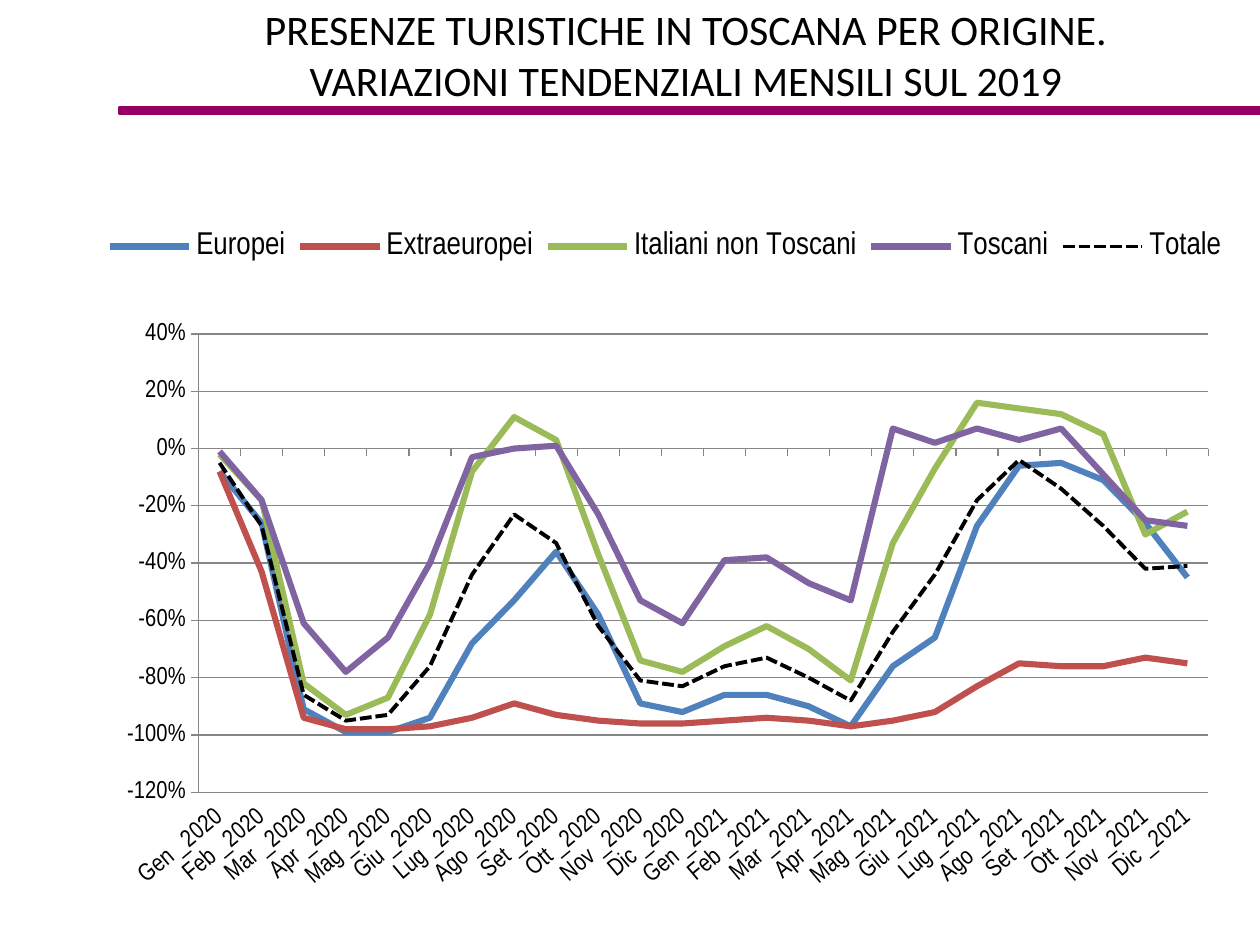
from dataclasses import dataclass

from pptx import Presentation
from pptx.chart.data import CategoryChartData
from pptx.dml.color import RGBColor
from pptx.enum.chart import (XL_CHART_TYPE, XL_LEGEND_POSITION, XL_TICK_MARK,
                             XL_TICK_LABEL_POSITION)
from pptx.enum.dml import MSO_LINE
from pptx.enum.shapes import MSO_SHAPE
from pptx.enum.text import MSO_ANCHOR, PP_ALIGN
from pptx.oxml import parse_xml
from pptx.oxml.ns import nsdecls, qn
from pptx.util import Cm, Pt


@dataclass(frozen=True)
class Theme:
    black: str = "000000"
    rule: str = "960064"
    grid: str = "868686"
    lines: tuple = ("4F81BD", "C0504D", "9BBB59", "8064A2", "000000")
    head: str = "Calibri"
    label: str = "Arial Narrow"
    title: int = 24
    legend: int = 18
    axis: int = 14


THEME = Theme()
TITLE = "PRESENZE TURISTICHE IN TOSCANA PER ORIGINE.\vVARIAZIONI TENDENZIALI MENSILI SUL 2019"
MONTHS = "Gen Feb Mar Apr Mag Giu Lug Ago Set Ott Nov Dic".split()
YEARS = (2020, 2021)
# Percent change on the same month of 2019
SERIES = {
    "Europei": (-8, -26, -91, -99, -99, -94, -68, -53, -36, -58, -89, -92,
                -86, -86, -90, -97, -76, -66, -27, -6, -5, -11, -26, -45),
    "Extraeuropei": (-8, -43, -94, -98, -98, -97, -94, -89, -93, -95, -96, -96,
                     -95, -94, -95, -97, -95, -92, -83, -75, -76, -76, -73, -75),
    "Italiani non Toscani": (-2, -18, -82, -93, -87, -58, -8, 11, 3, -37, -74, -78,
                             -69, -62, -70, -81, -33, -7, 16, 14, 12, 5, -30, -22),
    "Toscani": (-1, -18, -61, -78, -66, -40, -3, 0, 1, -23, -53, -61,
                -39, -38, -47, -53, 7, 2, 7, 3, 7, -9, -25, -27),
    "Totale": (-5, -27, -86, -95, -93, -76, -44, -23, -33, -62, -81, -83,
               -76, -73, -80, -88, -64, -44, -18, -4, -14, -27, -42, -41),
}


def color(code):
    return RGBColor.from_string(code)


def style(font, name, size):
    font.name = name
    font.size = Pt(size)
    font.bold = False
    font.color.rgb = color(THEME.black)


def stroke(line, code, width):
    line.color.rgb = color(code)
    line.width = Pt(width)


def add_rule(slide):
    bar = slide.shapes.add_shape(MSO_SHAPE.RECTANGLE, Cm(2.41), Cm(2.18), Cm(22.99), Cm(0.1))
    bar.shadow.inherit = False
    bar.fill.solid()
    bar.fill.fore_color.rgb = color(THEME.rule)
    stroke(bar.line, THEME.rule, 2)


def add_title(slide):
    frame = slide.shapes.add_textbox(Cm(2.36), Cm(0.05), Cm(22.94), Cm(2.08)).text_frame
    frame.word_wrap = True
    frame.vertical_anchor = MSO_ANCHOR.MIDDLE
    frame.text = TITLE
    para = frame.paragraphs[0]
    para.alignment = PP_ALIGN.CENTER
    style(para.font, THEME.head, THEME.title)


def place(part, index, box, inner=False):
    """Fix a chart part at box: left, top, width, height as shares of the chart."""
    for old in part.findall(qn("c:layout")):
        part.remove(old)
    target = '<c:layoutTarget val="inner"/>' if inner else ""
    modes = "".join(f'<c:{key}Mode val="edge"/>' for key in "xy")
    sizes = "".join(f'<c:{key} val="{val}"/>' for key, val in zip("xywh", box))
    part.insert(index, parse_xml(
        f'<c:layout {nsdecls("c")}><c:manualLayout>{target}{modes}{sizes}'
        '</c:manualLayout></c:layout>'))


def style_axes(chart):
    months, scale = chart.category_axis, chart.value_axis
    for axis in (months, scale):
        style(axis.tick_labels.font, THEME.label, THEME.axis)
        stroke(axis.format.line, THEME.grid, 0.75)
        axis.major_tick_mark = XL_TICK_MARK.OUTSIDE
        axis.minor_tick_mark = XL_TICK_MARK.NONE
    months.tick_label_position = XL_TICK_LABEL_POSITION.LOW
    months.tick_labels.font._element.getparent().getparent().getparent().find(
        qn("a:bodyPr")).set("rot", str(-40 * 60000))
    scale.minimum_scale, scale.maximum_scale, scale.major_unit = -1.2, 0.4, 0.2
    scale.tick_labels.number_format = "0%"
    scale.tick_labels.number_format_is_linked = False
    scale.has_major_gridlines = True
    stroke(scale.major_gridlines.format.line, THEME.grid, 0.75)


def style_legend(chart):
    chart.has_legend = True
    legend = chart.legend
    legend.position = XL_LEGEND_POSITION.TOP
    legend.include_in_layout = False
    style(legend.font, THEME.label, THEME.legend)
    place(legend._element, 1, (0.05, 0.02, 0.95, 0.1))


def add_trend(slide):
    data = CategoryChartData(number_format="0%")
    data.categories = [f"{month} _{year}" for year in YEARS for month in MONTHS]
    for name, rates in SERIES.items():
        data.add_series(name, [rate / 100 for rate in rates])
    chart = slide.shapes.add_chart(XL_CHART_TYPE.LINE, Cm(0.71), Cm(3.99),
                                   Cm(24.21), Cm(14), data).chart
    chart.has_title = False
    style(chart.font, THEME.head, 10)
    style_axes(chart)
    style_legend(chart)
    plot = chart.plots[0]
    plot.vary_by_categories = False
    for series, code in zip(plot.series, THEME.lines):
        series.smooth = False
        stroke(series.format.line, code, 3.5)
    total = plot.series[-1].format.line
    total.width = Pt(2.25)
    total.dash_style = MSO_LINE.SQUARE_DOT
    place(chart._chartSpace.chart.plotArea, 0, (0.136, 0.196, 0.841, 0.66), inner=True)


def main():
    deck = Presentation()
    deck.slide_width, deck.slide_height = Cm(25.4), Cm(19.05)
    slide = deck.slides.add_slide(deck.slide_layouts[6])
    add_rule(slide)
    add_title(slide)
    add_trend(slide)
    deck.save("out.pptx")


if __name__ == "__main__":
    main()
